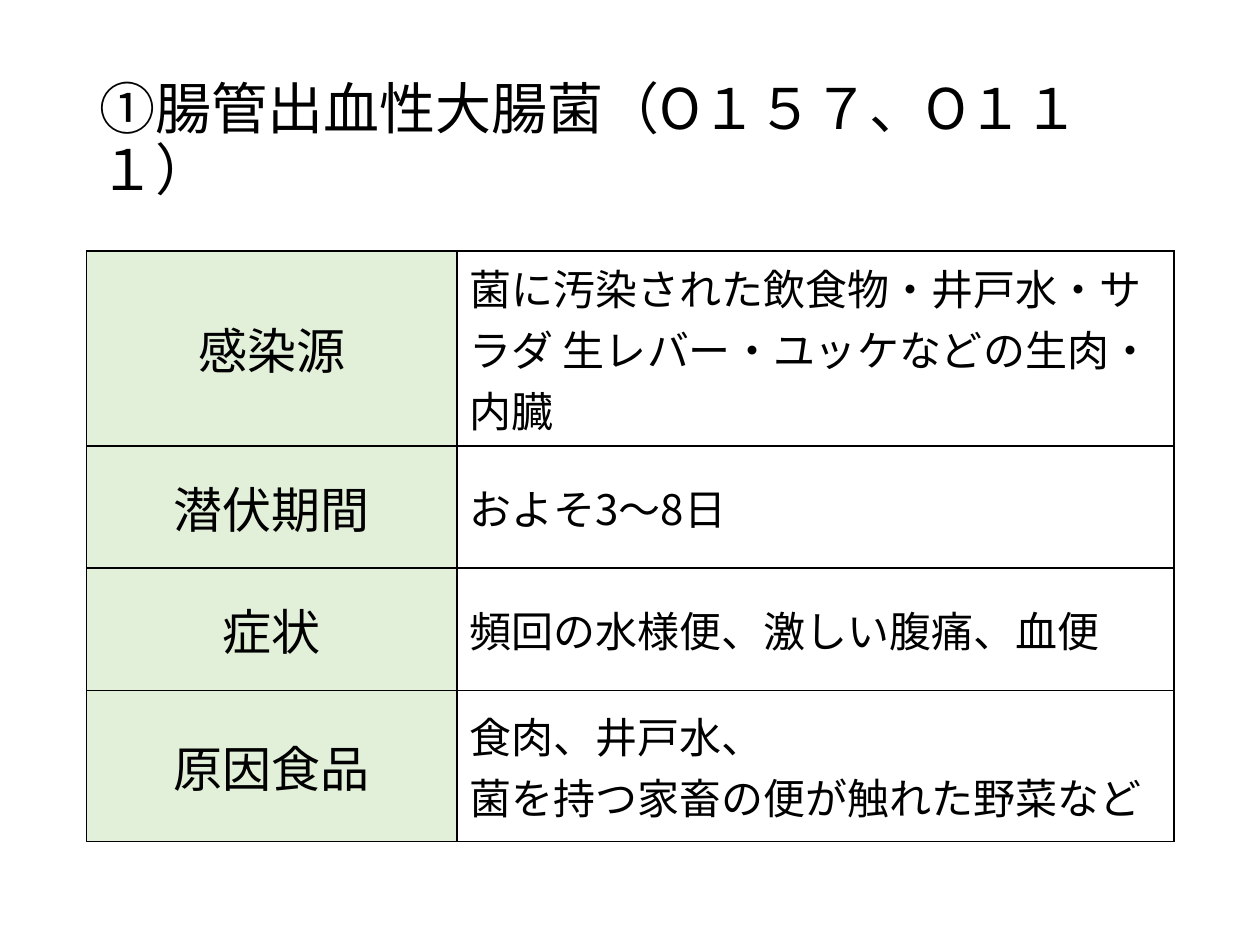
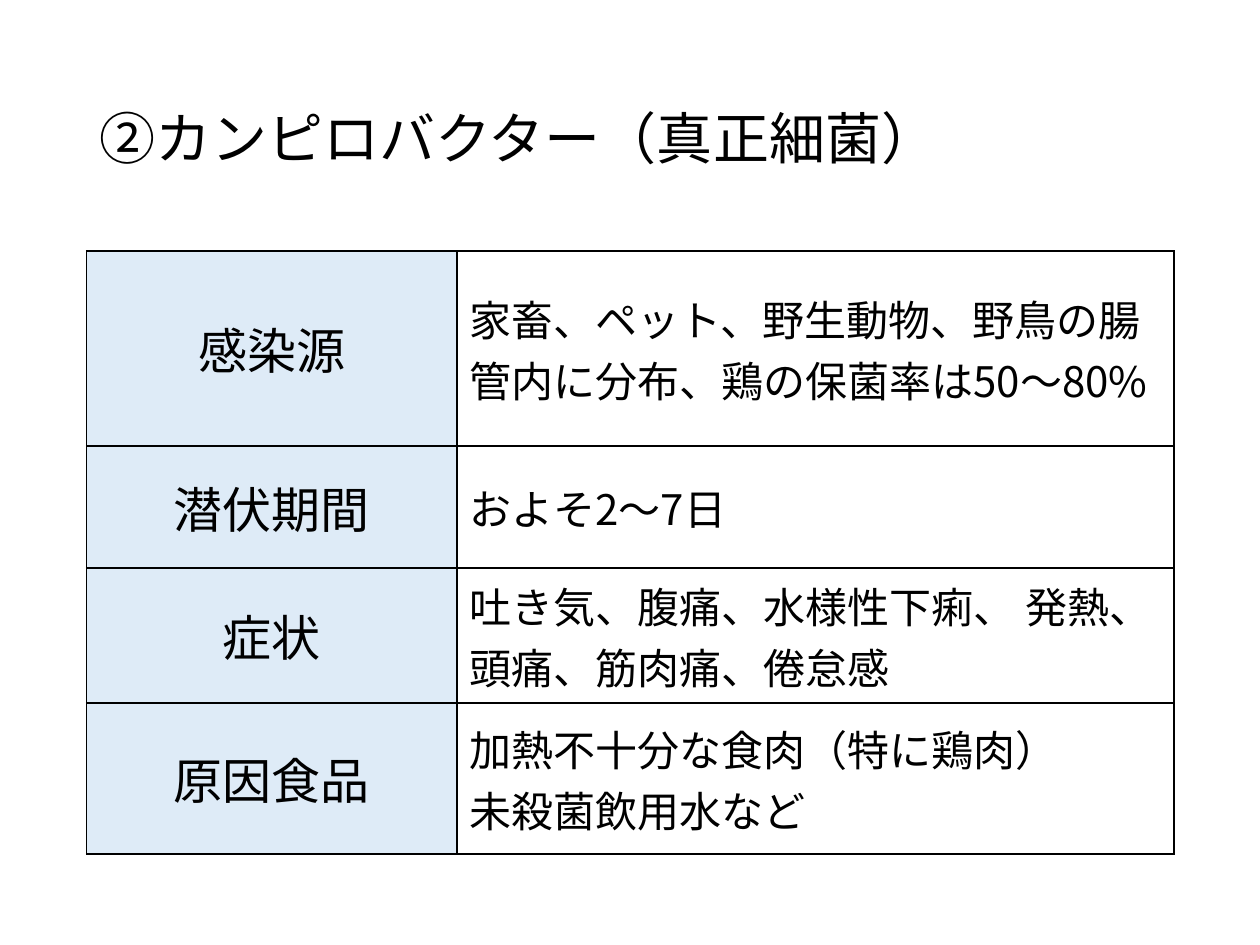
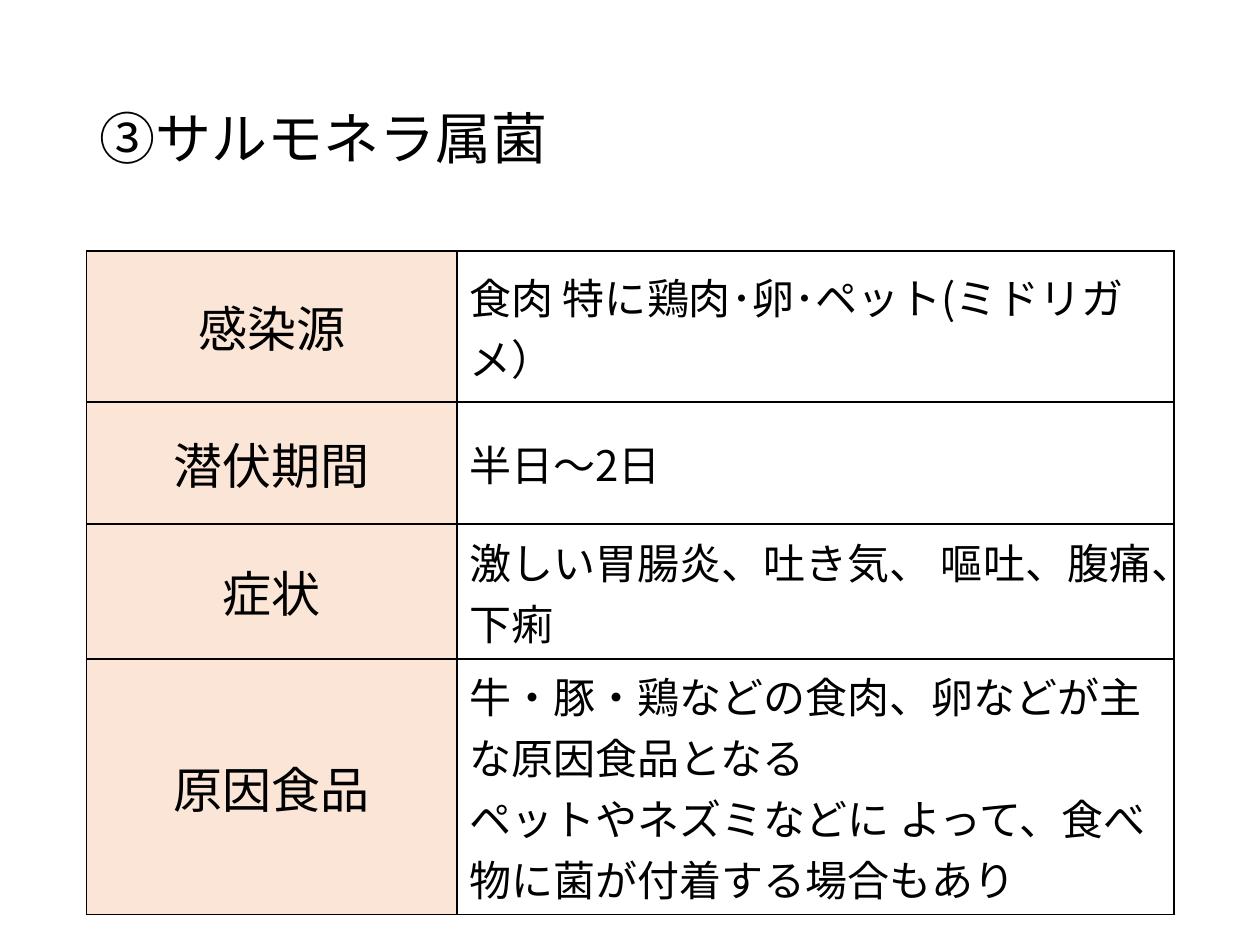
"""Builds three slides on food-poisoning bacteria, each a title over a fact table."""
from math import ceil
from lxml.etree import SubElement
from pptx import Presentation
from pptx.dml.color import RGBColor
from pptx.enum.lang import MSO_LANGUAGE_ID as Lang
from pptx.enum.text import MSO_ANCHOR as Anchor, PP_ALIGN as Align
from pptx.oxml.ns import qn
from pptx.util import Inches, Pt

TOPICS = ["感染源", "潜伏期間", "症状", "原因食品"]
BACTERIA = [
    ("①腸管出血性大腸菌（O１５７、O１１１）", "E2F0D9", [
        ["菌に汚染された飲食物・井戸水・サラダ 生レバー・ユッケなどの生肉・内臓"],
        ["およそ3～8日"],
        ["頻回の水様便、激しい腹痛、血便"],
        ["食肉、井戸水、", "菌を持つ家畜の便が触れた野菜など"],
    ]),
    ("②カンピロバクター（真正細菌）", "DEEBF7", [
        ["家畜、ペット、野生動物、野鳥の腸管内に分布、鶏の保菌率は50～80%"],
        ["およそ2〜7日"],
        ["吐き気、腹痛、水様性下痢、 発熱、", "頭痛、筋肉痛、倦怠感"],
        ["加熱不十分な食肉（特に鶏肉）", "未殺菌飲用水など"],
    ]),
    ("③サルモネラ属菌", "FBE5D6", [
        ["食肉 特に鶏肉･卵･ペット(ミドリガメ）"],
        ["半日～2日"],
        ["激しい胃腸炎、吐き気、 嘔吐、腹痛、下痢"],
        ["牛・豚・鶏などの食肉、卵などが主な原因食品となる",
         "ペットやネズミなどに よって、食べ物に菌が付着する場合もあり"],
    ]),
]

FONT, INK = "Noto Sans CJK JP", "000000"
LEFT, WIDTH = 11 / 16, 8.62
TITLE_TOP, TITLE_HEIGHT, TABLE_TOP = 0.4, 1.45, 1.99
COLUMNS, MIN_ROWS = [2.94, 5.69], [1.2, 0.97, 0.97, 1.2]
LINE_LENGTH, LINE_HEIGHT, CELL_PADDING = 16, 0.48, 0.11
TITLE = {"size": Pt(32), "line_spacing": 0.9}
TOPIC = {"size": Pt(28), "alignment": Align.CENTER}
FACT = {"size": Pt(24), "alignment": Align.LEFT}
FONT_FORMAT = {"name": FONT, "bold": False, "language_id": Lang.JAPANESE}


def colour(code):
    return RGBColor.from_string(code)


def row_height(least, lines):
    wrapped = sum(ceil(len(line.replace(" ", "")) / LINE_LENGTH) for line in lines)
    return max(least, wrapped * LINE_HEIGHT + CELL_PADDING)


def write(frame, lines, size, **layout):
    for number, line in enumerate(lines):
        paragraph = frame.add_paragraph() if number else frame.paragraphs[0]
        for name, value in layout.items():
            setattr(paragraph, name, value)
        run = paragraph.add_run()
        run.text = line
        run.font.color.rgb = colour(INK)
        for name, value in {**FONT_FORMAT, "size": size}.items():
            setattr(run.font, name, value)
        SubElement(run.font._element, qn("a:ea"), typeface=FONT)


def fill_cell(cell, lines, text_format, fill=None):
    cell.vertical_anchor = Anchor.MIDDLE
    write(cell.text_frame, lines, **text_format)
    properties = cell._tc.get_or_add_tcPr()
    for side in ("lnL", "lnR", "lnT", "lnB"):
        border = SubElement(properties, qn(f"a:{side}"), w=str(Pt(1)))
        SubElement(SubElement(border, qn("a:solidFill")), qn("a:srgbClr"), val=INK)
    if fill:
        cell.fill.solid()
        cell.fill.fore_color.rgb = colour(fill)
    else:
        cell.fill.background()


def add_title(slide, title):
    box = slide.shapes.add_textbox(
        *map(Inches, (LEFT, TITLE_TOP, WIDTH, TITLE_HEIGHT)))
    box.text_frame.word_wrap = True
    box.text_frame.vertical_anchor = Anchor.MIDDLE
    write(box.text_frame, [title], **TITLE)


def add_facts(slide, tint, facts):
    heights = [row_height(*row) for row in zip(MIN_ROWS, facts)]
    table = slide.shapes.add_table(
        len(heights), len(COLUMNS),
        *map(Inches, (LEFT, TABLE_TOP, WIDTH, sum(heights)))).table
    table.first_row = table.horz_banding = False
    for column, width in zip(table.columns, COLUMNS):
        column.width = Inches(width)
    for row, height, topic, lines in zip(table.rows, heights, TOPICS, facts):
        row.height = Inches(height)
        fill_cell(row.cells[0], [topic], TOPIC, tint)
        fill_cell(row.cells[1], lines, FACT)


def main():
    deck = Presentation()
    deck.slide_width, deck.slide_height = Inches(10), Inches(7.5)
    for title, tint, facts in BACTERIA:
        slide = deck.slides.add_slide(deck.slide_layouts[6])
        add_title(slide, title)
        add_facts(slide, tint, facts)
    deck.save("out.pptx")


if __name__ == "__main__":
    main()
